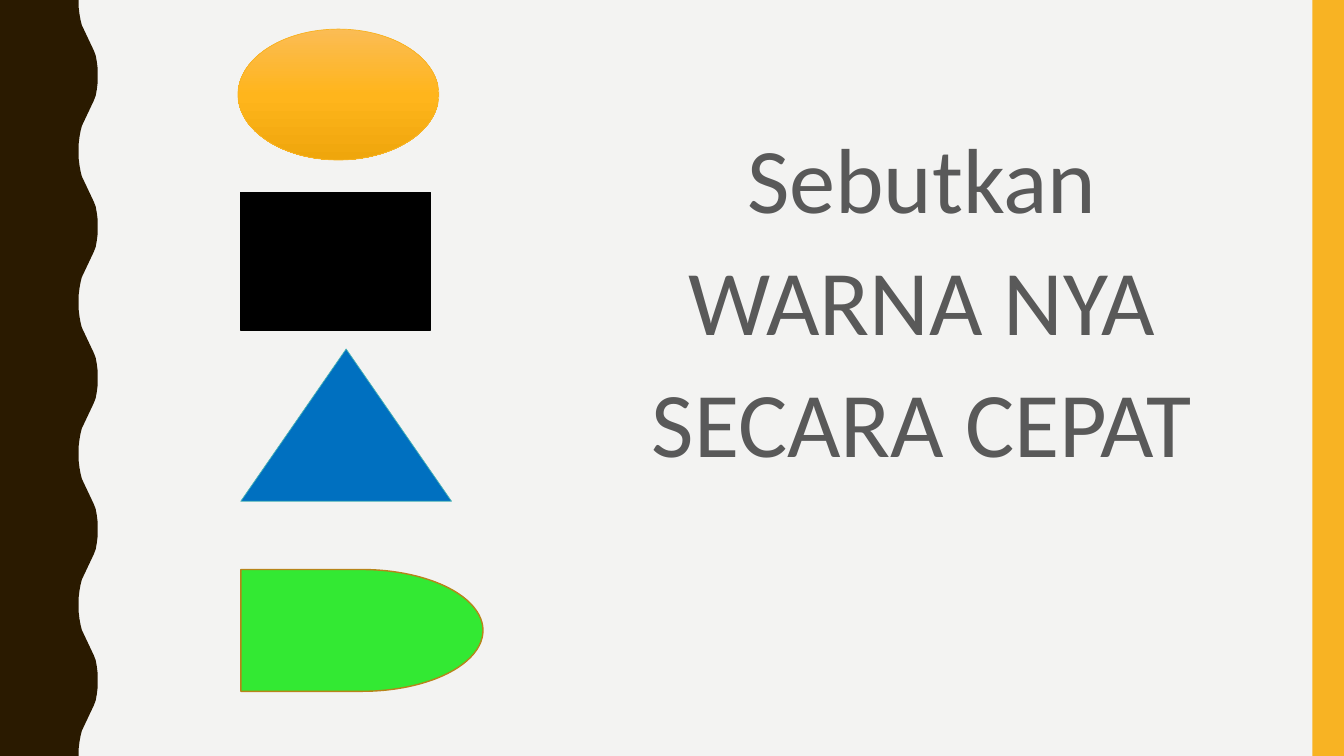
from copy import deepcopy
from pptx import Presentation
from pptx.dml.color import RGBColor
from pptx.enum.shapes import MSO_SHAPE as Kind
from pptx.enum.text import MSO_ANCHOR as Anchor, PP_ALIGN as Align
from pptx.oxml.ns import qn
from pptx.util import Pt

WIDE, HIGH = 960, 540
CREST = [(56.2, 0), (56.2, 5), (56.8, 10), (57.6, 14.4), (58.5, 18),
         (67, 36), (68.4, 39.6), (69.2, 44), (69.8, 49), (69.8, 54)]


def tint(color, code):
    color.rgb = RGBColor.from_string(code)


def paint(shape, fill, line=None, width=1):
    shape.shadow.inherit = False
    shape.fill.solid()
    tint(shape.fill.fore_color, fill)
    if line:
        tint(shape.line.color, line)
        shape.line.width = Pt(width)
    else:
        shape.line.fill.background()


def blend(shape, codes):
    shape.fill.gradient()
    shape.fill.gradient_angle = 270
    stops = shape.fill.gradient_stops
    first = stops[0]._gs
    first.addnext(deepcopy(first))
    for spot, (stop, code) in enumerate(zip(shape.fill.gradient_stops, codes)):
        tint(stop.color, code)
        stop.position = spot / (len(codes) - 1)


def add_wave(slide, left, top, height):
    period = 2 * CREST[-1][1]
    cycle = CREST + [(x, period - y) for x, y in CREST[-2::-1]]
    edge = [(x, y + turn * period)
            for turn in range(height // period) for x, y in cycle]
    points = [(Pt(left + x), Pt(top + y)) for x, y in edge]
    pen = slide.shapes.build_freeform(Pt(left), Pt(top))
    pen.add_line_segments(points + [(Pt(left), Pt(top + height))], close=True)
    paint(pen.convert_to_shape(), "2A1A00")


def add_band(slide, left, top, width, height):
    band = slide.shapes.add_shape(
        Kind.RECTANGLE, Pt(left), Pt(top), Pt(width), Pt(height))
    paint(band, "F8B323")


def add_forms(slide, left, top):
    forms = [
        (Kind.OVAL, -2, 0, 143.5, 93.5, "FFB51C", "F8B323", 0.5),
        (Kind.RECTANGLE, 0, 116.5, 135.5, 98.5, "000000", "000000", 1),
        (Kind.ISOSCELES_TRIANGLE, 0, 228.5, 150.5, 108.7, "0070C0", "46B2B5", 0.5),
        (Kind.FLOWCHART_DELAY, 0, 386, 173, 87, "33E933", "B7841A", 1),
    ]
    for kind, x, y, width, height, fill, line, weight in forms:
        form = slide.shapes.add_shape(
            kind, Pt(left + x), Pt(top + y), Pt(width), Pt(height))
        paint(form, fill, line, weight)
        if kind == Kind.OVAL:
            blend(form, ["FBBC54", "FFB51C", "EFA60C"])


def add_task(slide, left, top, width, height):
    body = slide.placeholders[1]
    body.left, body.top = Pt(left), Pt(top)
    body.width, body.height = Pt(width), Pt(height)
    frame = body.text_frame
    frame.word_wrap = True
    frame.vertical_anchor = Anchor.TOP
    frame.text = "Sebutkan WARNA NYA SECARA CEPAT"
    para = frame.paragraphs[0]
    para.alignment = Align.CENTER
    para.line_spacing = 1.1
    para.space_before = Pt(7)
    para.font.name = "Calibri"
    para.font.size = Pt(66)
    tint(para.font.color, "595959")
    props = para._p.get_or_add_pPr()
    props.set("marL", "0")
    props.set("indent", "0")
    bullet = props.makeelement(qn("a:buNone"), {})
    props.find(qn("a:defRPr")).addprevious(bullet)


def main():
    deck = Presentation()
    deck.slide_width, deck.slide_height = Pt(WIDE), Pt(HIGH)
    slide = deck.slides.add_slide(deck.slide_layouts[1])
    title = slide.shapes.title.element
    title.getparent().remove(title)
    slide.background.fill.solid()
    tint(slide.background.fill.fore_color, "F3F3F2")
    add_wave(slide, 0, 0, HIGH)
    add_band(slide, WIDE - 22.5, 0, 22.5, HIGH)
    add_task(slide, 437, 75, 443, 398)
    add_forms(slide, 172, 20.8)
    deck.save("out.pptx")


if __name__ == "__main__":
    main()
